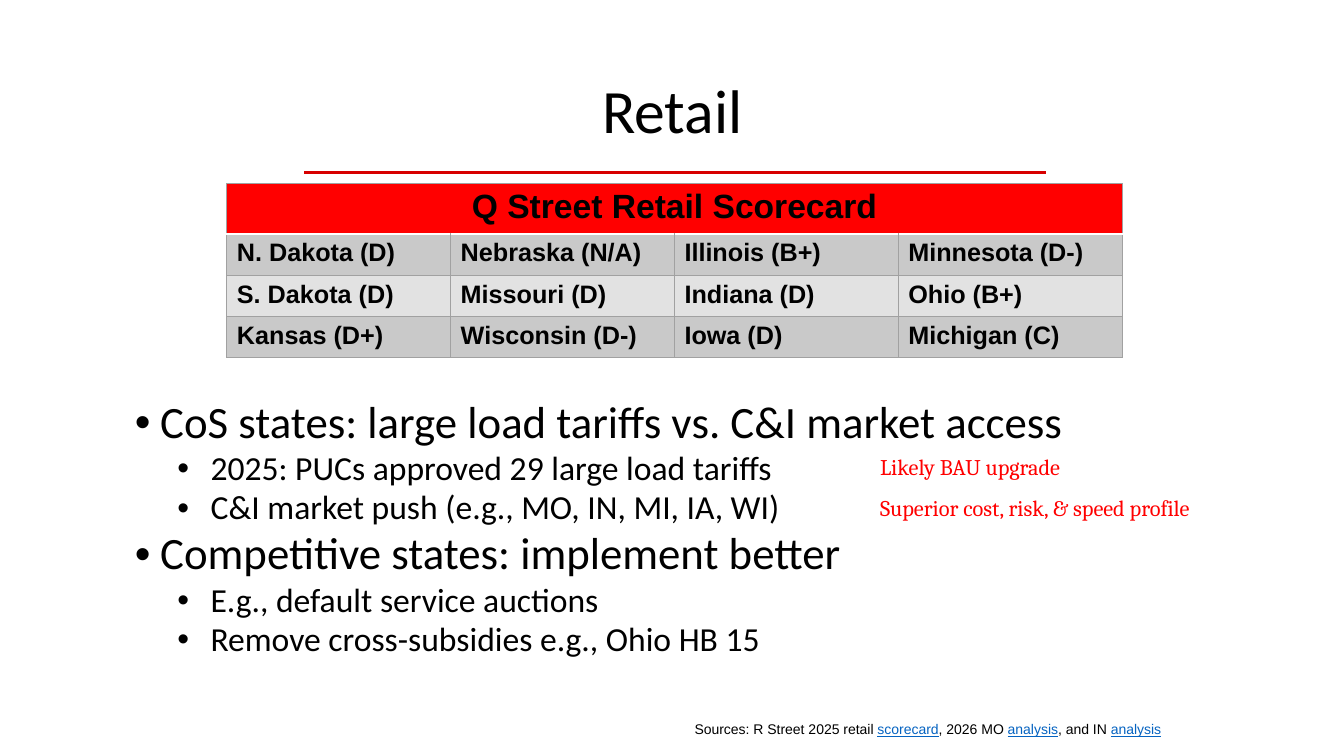
import pptx
import pptx.util
import pptx.dml.color
import pptx.enum.shapes
import pptx.enum.text
import pptx.oxml
import pptx.oxml.ns

RGBColor = pptx.dml.color.RGBColor
BLACK = RGBColor(0x00, 0x00, 0x00)
WHITE = RGBColor(0xFF, 0xFF, 0xFF)
RED = RGBColor(0xFF, 0x00, 0x00)
RULE_RED = RGBColor(0xD7, 0x00, 0x00)
LINK_BLUE = RGBColor(0x05, 0x63, 0xC1)
BAND_DARK = RGBColor(0xC9, 0xC9, 0xC9)
BAND_LIGHT = RGBColor(0xE2, 0xE2, 0xE2)
GRID_GRAY = RGBColor(0xA1, 0xA1, 0xA1)

EMU_PER_PX = 9144  # 100 px to the inch
CENTER = pptx.enum.text.PP_ALIGN.CENTER

GRADES = [
    ["N. Dakota (D)", "Nebraska (N/A)", "Illinois (B+)", "Minnesota (D-)"],
    ["S. Dakota (D)", "Missouri (D)", "Indiana (D)", "Ohio (B+)"],
    ["Kansas (D+)", "Wisconsin (D-)", "Iowa (D)", "Michigan (C)"],
]
POINTS = [
    (0, "CoS states: large load tariffs vs. C&I market access"),
    (1, "2025: PUCs approved 29 large load tariffs"),
    (1, "C&I market push (e.g., MO, IN, MI, IA, WI)"),
    (0, "Competitive states: implement better"),
    (1, "E.g., default service auctions"),
    (1, "Remove cross-subsidies e.g., Ohio HB 15"),
]
SOURCES = [
    ("Sources: R Street 2025 retail ", False),
    ("scorecard", True),
    (", 2026 MO ", False),
    ("analysis", True),
    (", and IN ", False),
    ("analysis", True),
]


def px(length):
    return pptx.util.Emu(round(length * EMU_PER_PX))


def add_text(para, text, size, font="Calibri", color=BLACK, bold=False,
             underline=False):
    span = para.add_run()
    span.text = text
    span.font.size = pptx.util.Pt(size)
    span.font.name = font
    span.font.color.rgb = color
    span.font.bold = bold
    span.font.underline = underline


def add_bullet(para, indent, hanging):
    properties = para._p.get_or_add_pPr()
    properties.set("marL", str(px(indent)))
    properties.set("indent", str(-px(hanging)))
    for xml in ('<a:buFont %s typeface="Arial"/>', '<a:buChar %s char="•"/>'):
        properties.append(
            pptx.oxml.parse_xml(xml % pptx.oxml.ns.nsdecls("a")))


def set_borders(cell, **edges):
    """Draw the edges L, R, T and B, each given as (colour, points)."""
    properties = cell._tc.get_or_add_tcPr()
    for position, side in enumerate("LRTB"):
        color, points = edges.get(side, (GRID_GRAY, 0.75))
        properties.insert(position, pptx.oxml.parse_xml(
            f'<a:ln{side} {pptx.oxml.ns.nsdecls("a")} '
            f'w="{pptx.util.Pt(points)}"><a:solidFill>'
            f'<a:srgbClr val="{color}"/></a:solidFill></a:ln{side}>'))


class SlideBuilder:
    def __init__(self, deck):
        self.page = deck.slides.add_slide(deck.slide_layouts[5])

    def title(self, text, left, top, width, height):
        box = self.page.shapes.title
        box.left, box.top = px(left), px(top)
        box.width, box.height = px(width), px(height)
        box.text_frame.vertical_anchor = pptx.enum.text.MSO_ANCHOR.MIDDLE
        para = box.text_frame.paragraphs[0]
        para.alignment = CENTER
        para.line_spacing = 0.9
        add_text(para, text, 44)

    def text_frame(self, left, top, width, height):
        box = self.page.shapes.add_textbox(
            px(left), px(top), px(width), px(height))
        box.text_frame.word_wrap = True
        return box.text_frame

    def bullets(self, points, *place):
        frame = self.text_frame(*place)
        for number, (level, text) in enumerate(points):
            para = frame.add_paragraph() if number else frame.paragraphs[0]
            para.level = level
            para.line_spacing = 0.98
            add_bullet(para, indent=25 + 50 * level, hanging=33)
            add_text(para, text, 24 if level else 32)

    def note(self, text, *place):
        para = self.text_frame(*place).paragraphs[0]
        add_text(para, text, 16, font="Cambria", color=RED)

    def sources(self, parts, *place):
        para = self.text_frame(*place).paragraphs[0]
        for text, linked in parts:
            add_text(para, text, 10, font="Arial", underline=linked,
                     color=LINK_BLUE if linked else BLACK)

    def rule(self, left, right, y):
        line = self.page.shapes.add_connector(
            pptx.enum.shapes.MSO_CONNECTOR.STRAIGHT,
            px(left), px(y), px(right), px(y))
        line.line.color.rgb = RULE_RED
        line.line.width = pptx.util.Pt(2)
        line._element.spPr.append(
            pptx.oxml.parse_xml(
                f'<a:effectLst {pptx.oxml.ns.nsdecls("a")}/>'))

    def scorecard(self, heading, grades, left, top, column_width,
                  heading_height, row_height):
        columns = len(grades[0])
        table = self.page.shapes.add_table(
            len(grades) + 1, columns, px(left), px(top),
            px(column_width * columns),
            px(heading_height + row_height * len(grades))).table
        table.first_row = table.horz_banding = False
        for column in table.columns:
            column.width = px(column_width)
        for number, row in enumerate(table.rows):
            row.height = px(row_height if number else heading_height)

        table.cell(0, 0).merge(table.cell(0, columns - 1))
        for column in range(columns):
            self.cell(table.cell(0, column), RED, B=(WHITE, 2))
        para = table.cell(0, 0).text_frame.paragraphs[0]
        para.alignment = CENTER
        add_text(para, heading, 24, font="Arial", bold=True)

        for number, states in enumerate(grades):
            fill = BAND_LIGHT if number % 2 else BAND_DARK
            edges = {} if number else {"T": (WHITE, 2)}
            for column, state in enumerate(states):
                cell = table.cell(number + 1, column)
                self.cell(cell, fill, **edges)
                add_text(cell.text_frame.paragraphs[0], state, 18,
                         font="Arial", bold=True)

    def cell(self, cell, fill, **edges):
        cell.fill.solid()
        cell.fill.fore_color.rgb = fill
        set_borders(cell, **edges)


def main():
    deck = pptx.Presentation()
    deck.slide_width, deck.slide_height = px(1333), px(750)
    slide = SlideBuilder(deck)
    slide.title("Retail", 92, 40, 1150, 145)
    slide.bullets(POINTS, 124, 388, 1202, 194)
    slide.rule(302, 1037, 171)
    slide.sources(SOURCES, 679, 710, 646, 27)
    slide.scorecard("Q Street Retail Scorecard", GRADES, 225, 182,
                    column_width=222, heading_height=50, row_height=41)
    slide.note("Likely BAU upgrade", 863, 445, 250, 37)
    slide.note("Superior cost, risk, & speed profile", 863, 485, 428, 37)
    deck.save("out.pptx")


if __name__ == "__main__":
    main()
